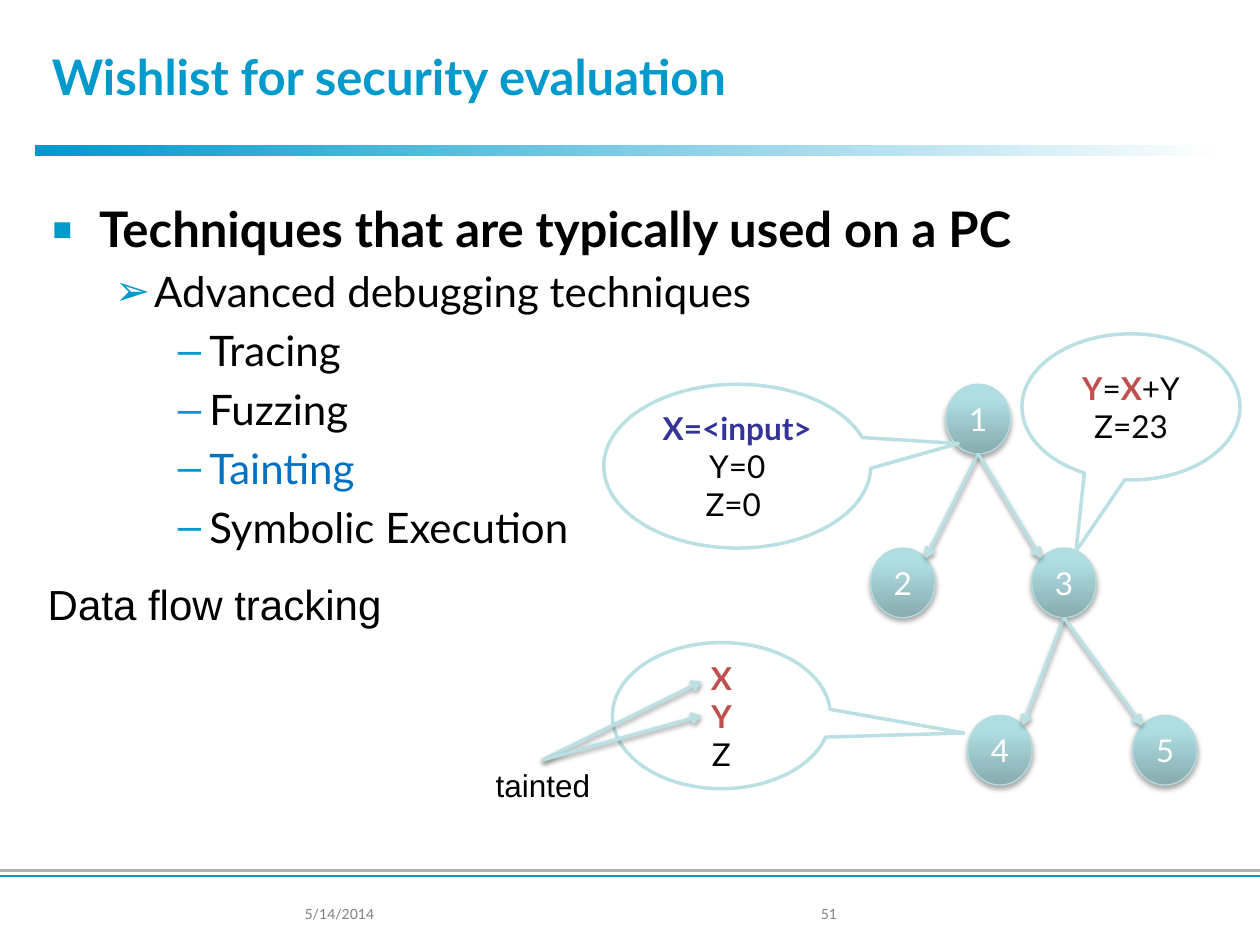
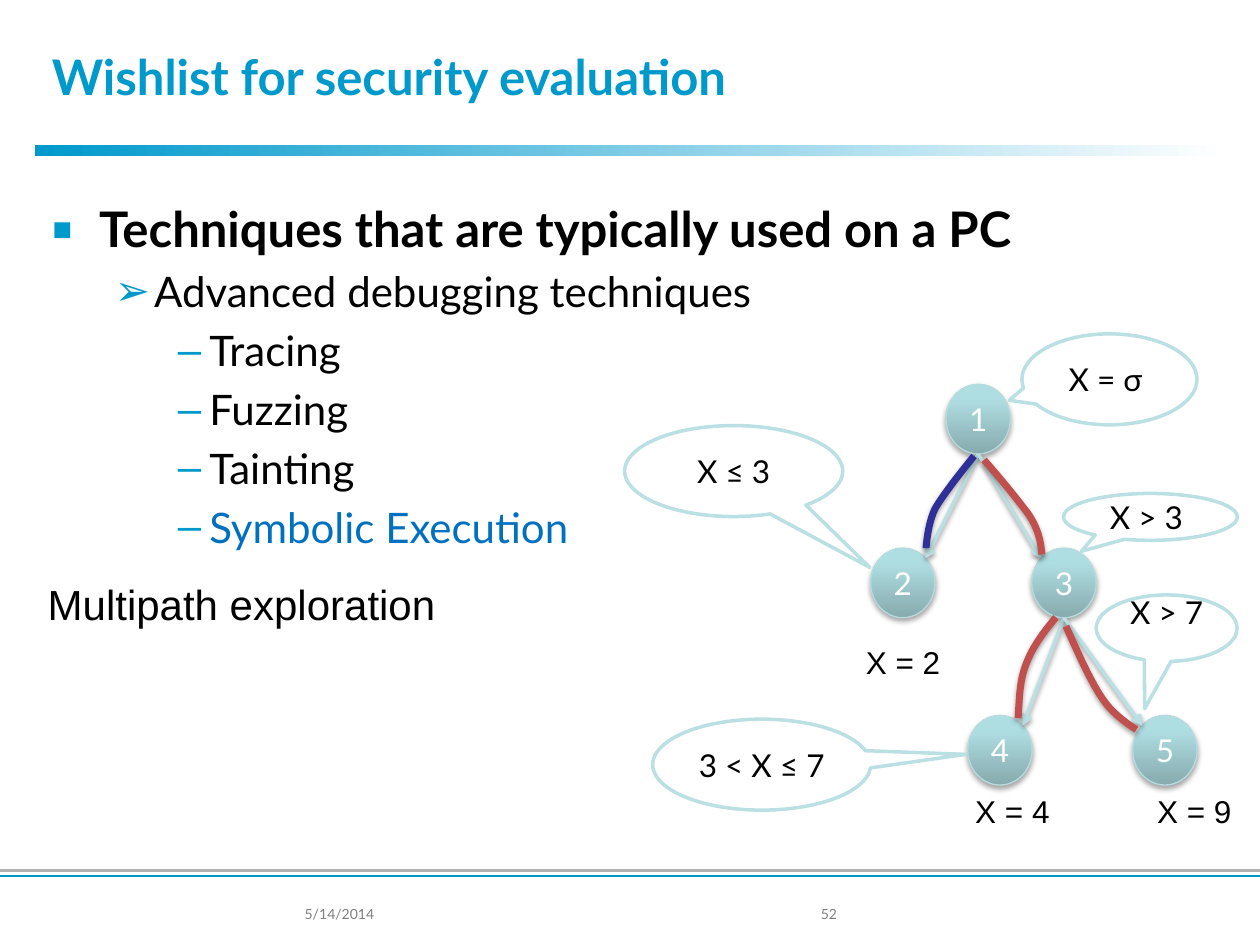
from dataclasses import dataclass

from pptx import Presentation
from pptx.dml.color import RGBColor
from pptx.enum.shapes import MSO_CONNECTOR as CONN, MSO_SHAPE as SHAPE
from pptx.enum.text import MSO_ANCHOR as ANCHOR, PP_ALIGN as ALIGN
from pptx.oxml import parse_xml
from pptx.oxml.ns import nsdecls
from pptx.util import Pt


@dataclass(frozen=True)
class Theme:
    # Colours
    accent: str = "0099CC"
    white: str = "FFFFFF"
    black: str = "000000"
    gray: str = "808080"
    rule: str = "B2B2B2"
    highlight: str = "0070C0"
    pale: str = "BBE0E3"
    node_line: str = "B6DCDF"
    navy: str = "333399"
    blue_path: str = "2F2F98"
    red: str = "C0504D"
    node_fill: tuple = ((0, "87ABAE"), (80, "AFDEE2"), (100, "AFE0E4"))
    # Fonts and type sizes
    font: str = "Lato"
    label_font: str = "Arial"
    title: int = 28
    body: int = 24
    label: int = 18
    footer: int = 8


T = Theme()


def rgb(code):
    return RGBColor.from_string(code)


def a_xml(tag, attrs="", inner=""):
    return parse_xml(f"<a:{tag} {nsdecls('a')} {attrs}>{inner}</a:{tag}>")


def write(tf, text, size=T.label, color=T.black, bold=False, font=T.font,
          align=ALIGN.LEFT, before=0, level=0, bullet=None):
    """Add one paragraph; text is a string or a list of (text, color, bold)."""
    p = tf.paragraphs[0]
    if p.runs:
        p = tf.add_paragraph()
        p.space_before = Pt(before)
    p.alignment, p.level = align, level
    if bullet:
        char, left, hang, percent = bullet
        pPr = p._p.get_or_add_pPr()
        pPr.set("marL", str(Pt(left)))
        pPr.set("indent", str(-Pt(hang)))
        pPr.append(a_xml("buClr", inner=f'<a:srgbClr val="{T.accent}"/>'))
        pPr.append(a_xml("buSzPct", f'val="{percent * 1000}"'))
        pPr.append(a_xml("buFont", f'typeface="{T.label_font}"'))
        pPr.append(a_xml("buChar", f'char="{char}"'))
    runs = [(text, color, bold)] if isinstance(text, str) else text
    for words, run_color, run_bold in runs:
        r = p.add_run()
        r.text = words
        r.font.name, r.font.size, r.font.bold = font, Pt(size), run_bold
        r.font.color.rgb = rgb(run_color)


class Deck:
    BULLETS = (("▪", 27, 27, 130), ("➢", 58.5, 22.5, 100), ("–", 90, 18, 100))

    def __init__(self, theme):
        self.t = theme
        self.prs = Presentation()
        self.prs.slide_width, self.prs.slide_height = Pt(720), Pt(540)
        self.s = None

    # Basic elements
    def text(self, box, text, anchor=ANCHOR.TOP, wrap=True, **fmt):
        tf = self.s.shapes.add_textbox(*map(Pt, box)).text_frame
        tf.word_wrap, tf.vertical_anchor = wrap, anchor
        write(tf, text, **fmt)
        return tf

    def label(self, box, text, **fmt):
        return self.text(box, text, wrap=False, font=self.t.label_font, **fmt)

    def style_line(self, shape, color, width):
        shape.line.color.rgb = rgb(color)
        shape.line.width = Pt(width)

    def shadow(self, shape, alpha=0, dist=1.6):
        """Set the soft drop shadow, or none when alpha is 0."""
        inner = (f'<a:outerShdw blurRad="{Pt(3.1)}" dist="{Pt(dist)}" dir="5400000" '
                 f'rotWithShape="0"><a:srgbClr val="{self.t.black}">'
                 f'<a:alpha val="{alpha * 1000}"/></a:srgbClr></a:outerShdw>')
        shape._element.spPr.append(a_xml("effectLst", inner=inner if alpha else ""))

    def gradient(self, shape, stops, degrees):
        gs = "".join(f'<a:gs pos="{pos * 1000}"><a:srgbClr val="{color}"/></a:gs>'
                     for pos, color in stops)
        lin = f'<a:lin ang="{degrees * 60000}" scaled="0"/>'
        shape._element.spPr.insert(2, a_xml("gradFill", inner=f"<a:gsLst>{gs}</a:gsLst>{lin}"))

    def line(self, start, end, color, width):
        c = self.s.shapes.add_connector(CONN.STRAIGHT, *map(Pt, (*start, *end)))
        self.style_line(c, color, width)
        return c

    def rule(self, y, color):
        self.shadow(self.line((0, y), (720, y), color, 1.5))

    def arrow(self, start, end):
        c = self.line(start, end, self.t.pale, 2)
        c.line._get_or_add_ln().append(a_xml("tailEnd", 'type="arrow"'))
        self.shadow(c, 38)

    def curve(self, color, start, *segments):
        """Draw a smooth path; each segment is two control points and an end."""
        points, last, steps = [], start, 12
        for c1, c2, end in segments:
            for i in range(1, steps + 1):
                u = i / steps
                v = 1 - u
                points.append(tuple(
                    Pt(v**3 * a + 3 * v * v * u * b + 3 * v * u * u * c + u**3 * d)
                    for a, b, c, d in zip(last, c1, c2, end)))
            last = end
        builder = self.s.shapes.build_freeform(*map(Pt, start))
        builder.add_line_segments(points, close=False)
        path_shape = builder.convert_to_shape()
        path_shape.fill.background()
        self.style_line(path_shape, color, 4)
        self.shadow(path_shape, 38)

    def node(self, box, name):
        sp = self.s.shapes.add_shape(SHAPE.OVAL, *map(Pt, box))
        self.gradient(sp, self.t.node_fill, 270)
        self.style_line(sp, self.t.node_line, 0.75)
        self.shadow(sp, 35, 1.8)
        tf = sp.text_frame
        tf.word_wrap, tf.vertical_anchor = False, ANCHOR.MIDDLE
        write(tf, name, color=self.t.white, align=ALIGN.CENTER)

    def callout(self, box, tip, *lines, lift=0):
        sp = self.s.shapes.add_shape(SHAPE.OVAL_CALLOUT, *map(Pt, box))
        sp.adjustments[0], sp.adjustments[1] = tip
        sp.fill.solid()
        sp.fill.fore_color.rgb = rgb(self.t.white)
        self.style_line(sp, self.t.pale, 2)
        self.shadow(sp)
        tf = sp.text_frame
        tf.word_wrap, tf.vertical_anchor = False, ANCHOR.MIDDLE
        tf.margin_bottom = Pt(3.6 + lift)
        for text in lines:
            write(tf, text, align=ALIGN.CENTER)

    # Parts common to both slides
    def frame(self, title, number):
        self.s = self.prs.slides.add_slide(self.prs.slide_layouts[6])
        bar = self.s.shapes.add_shape(SHAPE.RECTANGLE, *map(Pt, (20, 83.1, 680, 5.8)))
        self.gradient(bar, ((0, self.t.accent), (100, self.t.white)), 0)
        bar.line.fill.background()
        self.shadow(bar)
        self.rule(497.5, self.t.rule)
        self.rule(500.5, self.t.accent)
        self.text((22.5, 9.4, 677.5, 68.4), title, ANCHOR.MIDDLE,
                  size=self.t.title, color=self.t.accent, bold=True)
        for left, width, text in ((167, 85, "5/14/2014"), (462, 57, number)):
            self.text((left, 514, width, 16), text,
                      size=self.t.footer, color=self.t.gray)

    def outline(self, heading, topic, techniques, current):
        tf = self.text((22.5, 110, 677.5, 216), heading, size=self.t.title,
                       bold=True, bullet=self.BULLETS[0])
        for level, text in [(1, topic)] + [(2, name) for name in techniques]:
            write(tf, text, size=self.t.body, before=4.8, level=level,
                  color=self.t.highlight if text == current else self.t.black,
                  bullet=self.BULLETS[level])

    def tree(self):
        w, h = 36.8, 39.8
        nodes = {1: (540.6, 219.6), 2: (497.5, 313.2), 3: (589.6, 313.2),
                 4: (553, 408.8), 5: (647.3, 408.8)}
        for name, corner in nodes.items():
            self.node((*corner, w, h), str(name))
        # Edges run from the parent's foot to the child's near upper side
        for parent, child in ((1, 2), (1, 3), (3, 4), (3, 5)):
            (px, py), (cx, cy) = nodes[parent], nodes[child]
            side = 0.854 if cx < px else 0.146
            self.arrow((px + w / 2, py + h), (cx + side * w, cy + 0.146 * h))

    def wishlist(self, number, current, goal):
        self.frame("Wishlist for security evaluation", number)
        self.outline("Techniques that are typically used on a PC",
                     "Advanced debugging techniques",
                     ("Tracing", "Fuzzing", "Tainting", "Symbolic Execution"), current)
        self.tree()
        self.label((20.2, 327, 238, 36), goal, size=self.t.body)


def tainting(deck):
    deck.wishlist("51", "Tainting", "Data flow tracking")
    tainted_x, tainted_y = ("X", T.red, True), ("Y", T.red, True)
    deck.callout((345, 219.6, 152.6, 93.6), (0.828, -0.138),
                 [("X=<input>", T.navy, True)], "Y=0", "Z=0 ")
    deck.callout((350, 367.2, 124.6, 83.5), (1.112, 0.119),
                 [tainted_x], [tainted_y], "Z")
    for y in (389.5, 409):
        deck.arrow((310.3, 434.2), (401, y))
    deck.label((275.8, 434.2, 69, 29), "tainted", align=ALIGN.CENTER)
    deck.callout((584, 190.8, 124.6, 83.5), (-0.252, 0.988),
                 [tainted_y, ("=", T.black, False), tainted_x, ("+Y", T.black, False)],
                 "Z=23")


def symbolic_execution(deck):
    deck.wishlist("52", "Symbolic Execution", "Multipath exploration")
    # Path conditions
    deck.callout((584, 190.8, 100, 52), (-0.573, 0.231), "X = σ ")
    deck.callout((357, 243.2, 124.6, 52), (0.624, 1.059), "X ≤ 3")
    deck.callout((607.7, 282, 99.4, 26.8), (-0.396, 0.732), "X > 3 ")
    deck.callout((626.4, 340, 80.6, 38), (-0.157, 1.21), "X > 7", lift=19)
    deck.callout((373, 411, 124.6, 52), (0.936, -0.113), "3 < X ≤ 7")
    # Explored paths
    deck.curve(T.blue_path, (556.6, 260.6),
               ((547.9, 271.4), (539.3, 282.2), (534.2, 290.9)),
               ((529.9, 300.2), (529.2, 313.2), (529.2, 313.2)))
    deck.curve(T.red, (609.1, 357.8),
               ((616.3, 373.7), (623.5, 390.2), (630.7, 400.3)),
               ((637.2, 409.7), (649.4, 416.9), (649.4, 416.9)))
    deck.curve(T.red, (562.3, 262.8),
               ((572.4, 274.3), (581.8, 285.8), (588.2, 294.5)),
               ((594, 303.8), (594.7, 310.3), (595.4, 316.8)))
    deck.curve(T.red, (603.4, 352.8),
               ((596.2, 361.4), (589.7, 370.1), (586.1, 380.2)),
               ((582.5, 389.5), (582.5, 400.3), (581.8, 410.4)))
    # Sample inputs
    for left, top, text in ((485, 363.6, "X = 2"), (547.5, 449, "X = 4"),
                            (651.5, 449, "X = 9")):
        deck.label((left, top, 62, 29), text, align=ALIGN.CENTER)


def main():
    deck = Deck(T)
    tainting(deck)
    symbolic_execution(deck)
    deck.prs.save("out.pptx")


if __name__ == "__main__":
    main()
